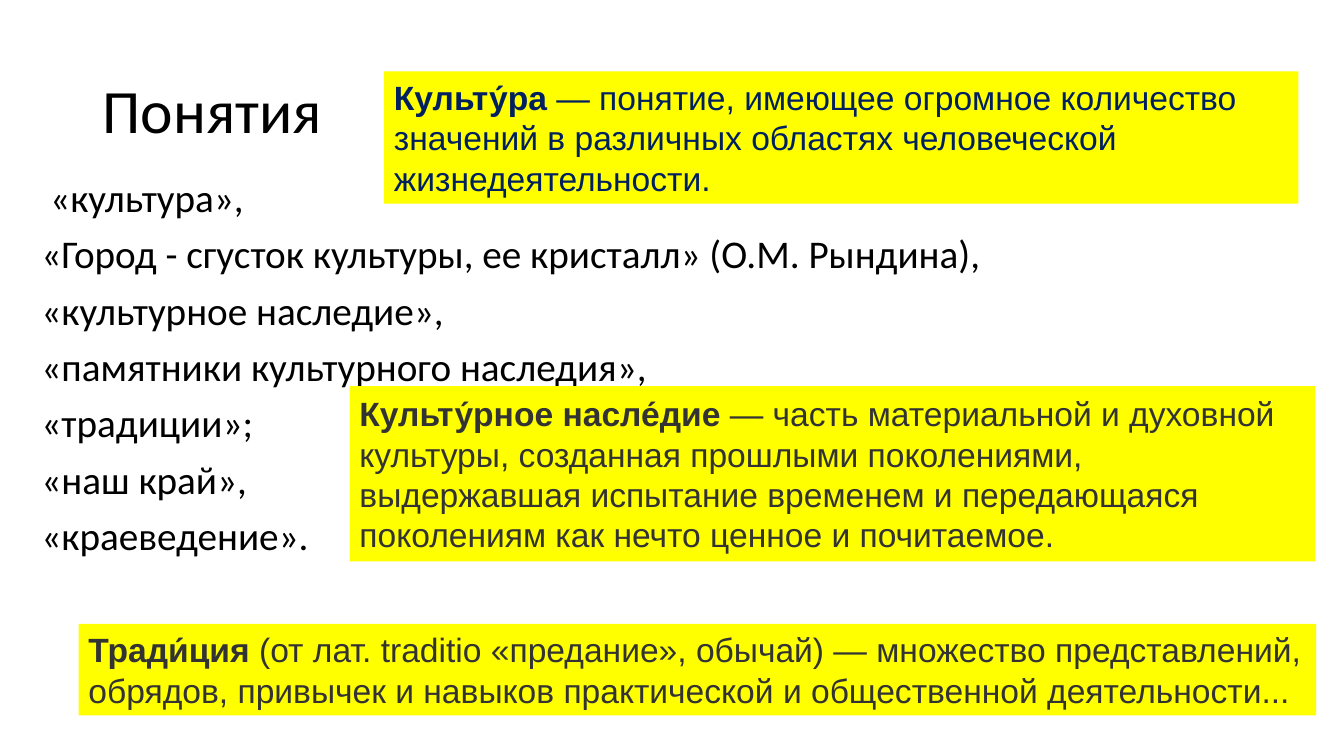
from lxml import etree
from pptx import Presentation
from pptx.dml.color import RGBColor
from pptx.enum import shapes, text
from pptx.oxml import ns
from pptx.util import Cm, Pt

BLACK = RGBColor(0x00, 0x00, 0x00)
NAVY = RGBColor(0x00, 0x20, 0x60)
GRAY = RGBColor(0x33, 0x33, 0x33)
YELLOW = RGBColor(0xFF, 0xFF, 0x00)

HEADING = "Понятия"
CONCEPTS = [
    " «культура»,",
    "«Город - сгусток культуры, ее кристалл» (О.М. Рындина),",
    "«культурное наследие»,",
    "«памятники культурного наследия»,",
    "«традиции»;",
    "«наш край»,",
    "«краеведение».",
]
DEFINITIONS = [
    ("Культу́ра",
     " — понятие, имеющее огромное количество значений в различных областях "
     "человеческой жизнедеятельности.",
     NAVY, (9.68, 1.8, 23.04, 3.33)),
    ("Культу́рное насле́дие",
     " — часть материальной и духовной культуры, созданная прошлыми поколениями, "
     "выдержавшая испытание временем и передающаяся поколениям как нечто ценное и почитаемое.",
     GRAY, (8.81, 9.73, 24.33, 4.42)),
    ("Тради́ция",
     " (от лат. traditio «предание», обычай) — множество представлений, обрядов, "
     "привычек и навыков практической и общественной деятельности...",
     GRAY, (1.98, 15.72, 31.19, 2.31)),
]
HEADING_BOX = (2.33, 1.02, 29.21, 3.68)
CONCEPTS_BOX = (0.79, 4.37, 29.21, 12.09)


def write(paragraph, words, *, font, size, color, bold=False, line=1.0, before=0):
    paragraph.alignment = text.PP_ALIGN.LEFT
    paragraph.line_spacing = line
    paragraph.space_before = Pt(before)
    run = paragraph.add_run()
    run.text = words
    run.font.name = font
    run.font.size = Pt(size)
    run.font.bold = bold
    run.font.color.rgb = color


def place(part, box):
    part.left, part.top, part.width, part.height = map(Cm, box)


def set_frame(frame, anchor, fit):
    frame.word_wrap = True
    frame.vertical_anchor = anchor
    frame.auto_size = fit


def remove_bullet(paragraph):
    properties = paragraph._p.get_or_add_pPr()
    properties.set("marL", "0")
    properties.set("indent", "0")
    etree.SubElement(properties, ns.qn("a:buNone"))


def main():
    deck = Presentation()
    deck.slide_width, deck.slide_height = Cm(33.87), Cm(19.05)
    slide = deck.slides.add_slide(deck.slide_layouts[1])
    heading, concepts = slide.placeholders

    place(heading, HEADING_BOX)
    set_frame(heading.text_frame, text.MSO_ANCHOR.MIDDLE, text.MSO_AUTO_SIZE.NONE)
    write(heading.text_frame.paragraphs[0], HEADING,
          font="Calibri", size=44, color=BLACK, line=0.9)

    place(concepts, CONCEPTS_BOX)
    frame = concepts.text_frame
    set_frame(frame, text.MSO_ANCHOR.TOP, text.MSO_AUTO_SIZE.NONE)
    for index, concept in enumerate(CONCEPTS):
        paragraph = frame.add_paragraph() if index else frame.paragraphs[0]
        write(paragraph, concept, font="Calibri", size=28, color=BLACK, line=0.9, before=10)
        remove_bullet(paragraph)

    for term, meaning, color, box in DEFINITIONS:
        definition = slide.shapes.add_shape(shapes.MSO_SHAPE.RECTANGLE, *map(Cm, box))
        definition.shadow.inherit = False
        definition.fill.solid()
        definition.fill.fore_color.rgb = YELLOW
        definition.line.fill.background()
        set_frame(definition.text_frame, text.MSO_ANCHOR.MIDDLE,
                  text.MSO_AUTO_SIZE.SHAPE_TO_FIT_TEXT)
        paragraph = definition.text_frame.paragraphs[0]
        for words, bold in ((term, True), (meaning, False)):
            write(paragraph, words, font="Arial", size=24, color=color, bold=bold)

    deck.save("out.pptx")


if __name__ == "__main__":
    main()
